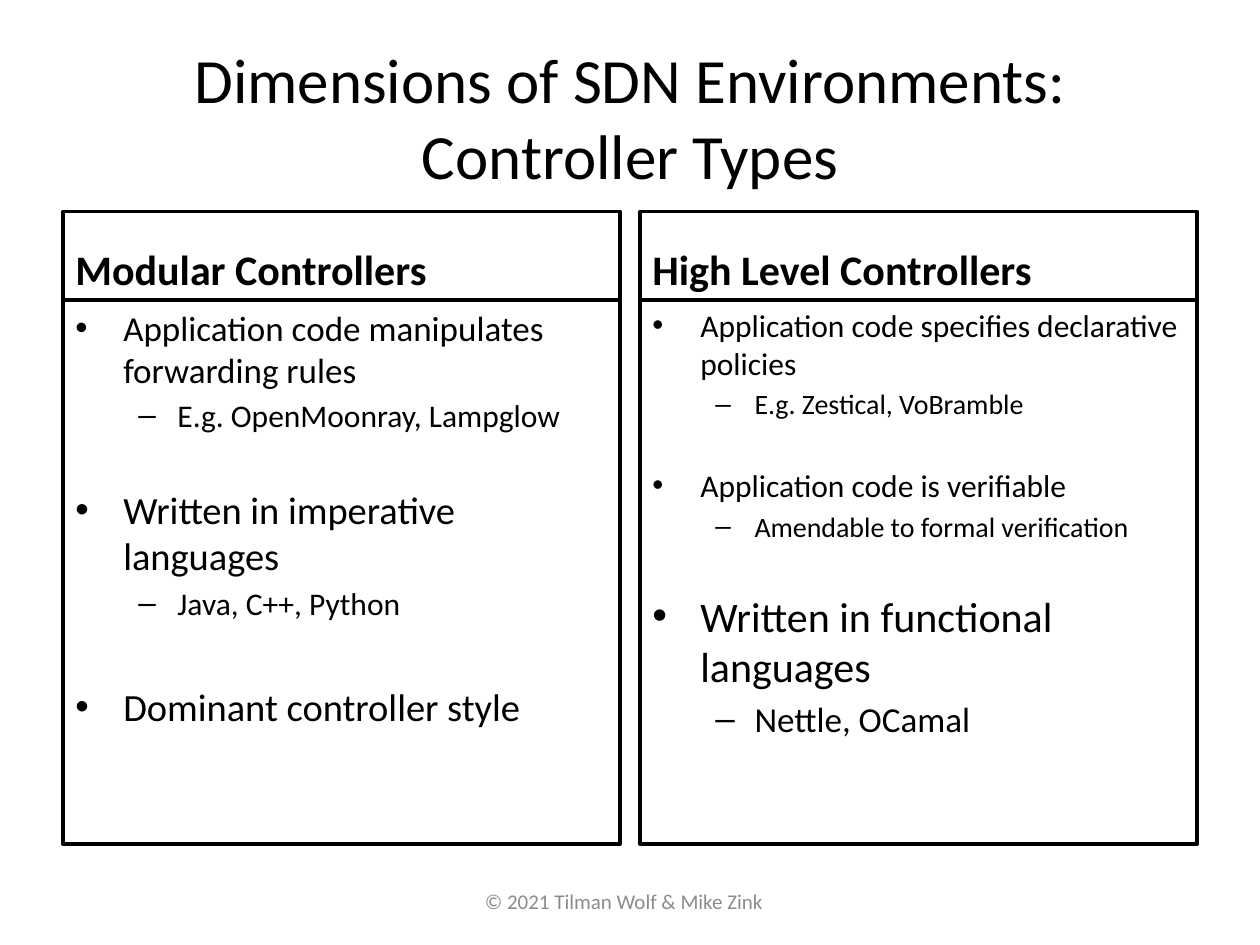
from dataclasses import dataclass

from lxml.etree import SubElement
from pptx import Presentation
from pptx.dml.color import RGBColor
from pptx.enum.shapes import MSO_SHAPE as Shape
from pptx.enum.text import MSO_ANCHOR as Anchor, MSO_AUTO_SIZE as AutoSize, PP_ALIGN as Align
from pptx.oxml.ns import qn
from pptx.util import Inches, Pt


@dataclass(frozen=True)
class Theme:
    font: str = "Calibri"
    ink: RGBColor = RGBColor(0x00, 0x00, 0x00)
    paper: RGBColor = RGBColor(0xFF, 0xFF, 0xFF)
    muted: RGBColor = RGBColor(0x8C, 0x8C, 0x8C)
    title: int = 36
    heading: int = 24
    footer: int = 12
    border: int = 2
    spacing: float = 0.19  # space before, as a share of the type size
    line: float = 1.22  # line height, as a share of the type size


THEME = Theme()
BULLETS = (("•", 0.38, -0.38), ("–", 0.81, -0.31))  # mark, margin, indent

MARGIN = 0.5
COLUMN_WIDTH = 4.42
COLUMN_STEP = 4.58
HEADING_TOP, HEADING_HEIGHT = 1.68, 0.7
BODY_HEIGHT = 4.32

# Each point: text, bullet level, type size, size of the open line above it
COLUMNS = (
    ("Modular Controllers", (
        ("Application code manipulates forwarding rules", 0, 20, 0),
        ("E.g. OpenMoonray, Lampglow", 1, 18, 0),
        ("Written in imperative languages", 0, 22, 18),
        ("Java, C++, Python", 1, 18, 0),
        ("Dominant controller style", 0, 22, 22),
    )),
    ("High Level Controllers", (
        ("Application code specifies declarative policies", 0, 18, 0),
        ("E.g. Zestical, VoBramble", 1, 16, 0),
        ("Application code is verifiable", 0, 18, 16),
        ("Amendable to formal verification", 1, 16, 0),
        ("Written in functional languages", 0, 24, 16),
        ("Nettle, OCamal", 1, 20, 0),
    )),
)


def write(paragraph, text, *, size, color=THEME.ink, bold=False, align=Align.LEFT, before=0):
    paragraph.text = text
    paragraph.alignment = align
    paragraph.space_before = Pt(round(before, 1))
    for run in paragraph.runs:
        run.font.name = THEME.font
        run.font.size = Pt(size)
        run.font.bold = bold
        run.font.color.rgb = color


def add_bullet(paragraph, level):
    mark, margin, indent = BULLETS[level]
    paragraph.level = level
    properties = paragraph._p.get_or_add_pPr()
    properties.set("marL", str(Inches(margin)))
    properties.set("indent", str(Inches(indent)))
    SubElement(properties, qn("a:buFont"), typeface="Arial")
    SubElement(properties, qn("a:buChar"), char=mark)


def add_panel(slide, left, top, height, anchor):
    """Add a bordered box of column width and return its text frame."""
    panel = slide.shapes.add_shape(
        Shape.RECTANGLE, Inches(left), Inches(top), Inches(COLUMN_WIDTH), Inches(height))
    panel.shadow.inherit = False
    panel.fill.solid()
    panel.fill.fore_color.rgb = THEME.paper
    panel.line.color.rgb = THEME.ink
    panel.line.width = Pt(THEME.border)
    frame = panel.text_frame
    frame.word_wrap = True
    frame.vertical_anchor = anchor
    return frame


def add_column(slide, left, heading, points):
    heading_frame = add_panel(slide, left, HEADING_TOP, HEADING_HEIGHT, Anchor.BOTTOM)
    write(heading_frame.paragraphs[0], heading, size=THEME.heading, bold=True,
          before=THEME.heading * THEME.spacing)

    body = add_panel(slide, left, HEADING_TOP + HEADING_HEIGHT, BODY_HEIGHT, Anchor.TOP)
    for index, (text, level, size, gap) in enumerate(points):
        point = body.add_paragraph() if index else body.paragraphs[0]
        before = size * THEME.spacing + gap * (THEME.line + THEME.spacing)
        write(point, text, size=size, before=before)
        add_bullet(point, level)


def set_title(slide, text):
    title = slide.shapes.title
    title.left, title.top = Inches(MARGIN), Inches(0.3)
    title.width, title.height = Inches(9), Inches(1.25)
    frame = title.text_frame
    frame.auto_size = AutoSize.NONE
    frame.vertical_anchor = Anchor.MIDDLE
    write(frame.paragraphs[0], text, size=THEME.title, align=Align.CENTER)


def add_footer(slide, text):
    footer = slide.shapes.add_textbox(Inches(3.75), Inches(7), Inches(2.44), Inches(0.5))
    footer.text_frame.word_wrap = False
    write(footer.text_frame.paragraphs[0], text, size=THEME.footer, color=THEME.muted)


def main():
    deck = Presentation()
    deck.slide_width, deck.slide_height = Inches(10), Inches(7.5)
    slide = deck.slides.add_slide(deck.slide_layouts.get_by_name("Title Only"))
    add_footer(slide, "© 2021 Tilman Wolf & Mike Zink")
    set_title(slide, "Dimensions of SDN Environments:\vController Types")
    for index, (heading, points) in enumerate(COLUMNS):
        add_column(slide, MARGIN + index * COLUMN_STEP, heading, points)
    deck.save("out.pptx")


if __name__ == "__main__":
    main()
